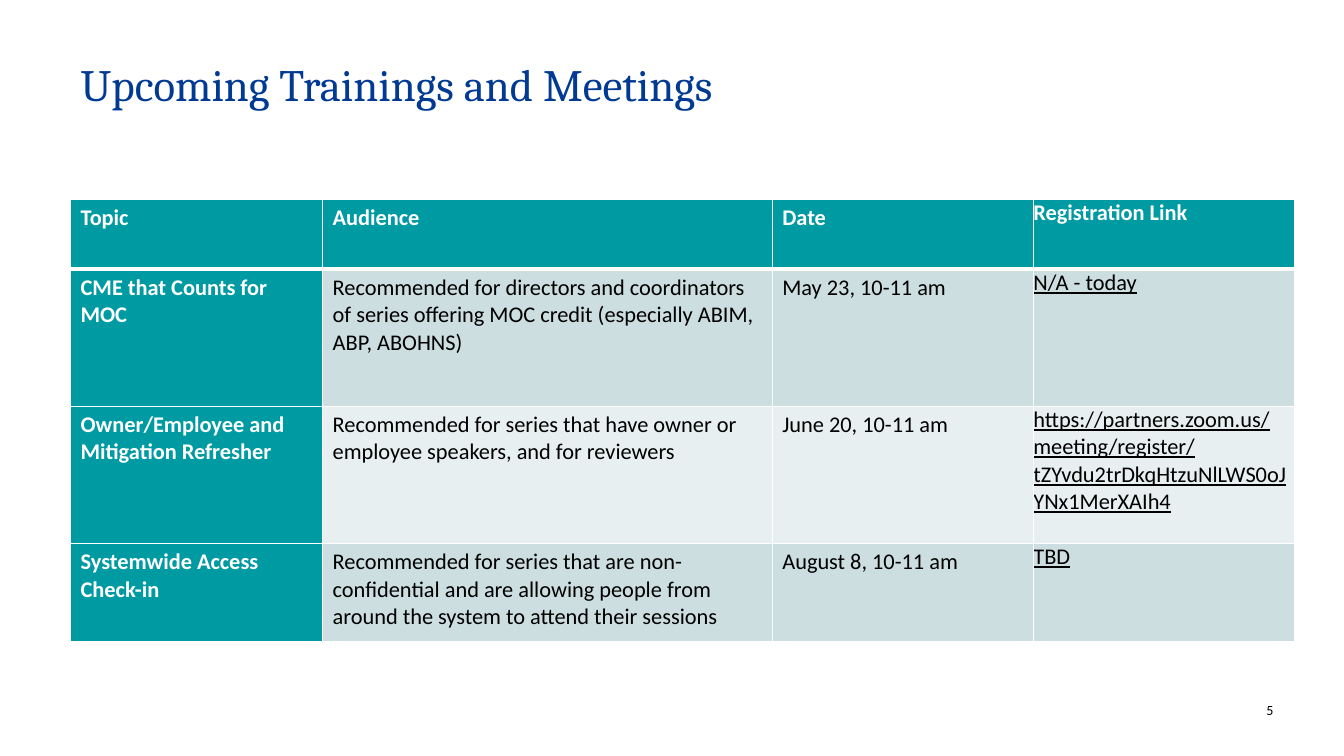
from lxml.etree import SubElement
from pptx import Presentation
from pptx.dml.color import RGBColor
from pptx.enum.text import MSO_ANCHOR, MSO_AUTO_SIZE, PP_ALIGN
from pptx.oxml.ns import qn
from pptx.util import Inches, Pt

TITLE = "Upcoming Trainings and Meetings"
PAGE_NUMBER = "5"
HEADINGS = ("Topic", "Audience", "Date", "Registration Link")
TRAININGS = [
    ("CME that Counts for MOC",
     "Recommended for directors and coordinators of series offering MOC credit "
     "(especially ABIM, ABP, ABOHNS)",
     "May 23, 10-11 am",
     "N/A - today"),
    ("Owner/Employee and Mitigation Refresher",
     "Recommended for series that have owner or employee speakers, and for reviewers",
     "June 20, 10-11 am",
     "https://partners.zoom.us/meeting/register/tZYvdu2trDkqHtzuNlLWS0oJYNx1MerXAIh4"),
    ("Systemwide Access Check-in",
     "Recommended for series that are non-confidential and are allowing people "
     "from around the system to attend their sessions",
     "August 8, 10-11 am",
     "TBD"),
]
COLORS = {"navy": "003A93", "teal": "009AA3", "odd": "CCDEE0", "even": "E7EFF0",
          "white": "FFFFFF", "black": "000000"}

SLIDE_WIDTH, SLIDE_HEIGHT = 13.33, 7.5
LEFT = 0.7
TABLE_TOP = 1.98
COLUMN_WIDTHS = (2.5, 4.46, 2.59, 2.59)
ROW_HEIGHTS = (0.69, 1.36, 1.36, 0.98)
LINK_COLUMN = len(HEADINGS) - 1


def write(frame, text, size=16, font="Calibri", color="black", bold=False,
          underline=False, align=PP_ALIGN.LEFT, spacing=None):
    frame.word_wrap = True
    paragraph = frame.paragraphs[0]
    paragraph.alignment = align
    if spacing:
        paragraph.line_spacing = spacing
    run = paragraph.add_run()
    run.text = text
    run.font.size = Pt(size)
    run.font.name = font
    run.font.bold = bold
    run.font.underline = underline
    run.font.color.rgb = RGBColor.from_string(COLORS[color])


def add_borders(cell, **widths):
    properties = cell._tc.get_or_add_tcPr()
    for side, width in widths.items():
        line = SubElement(properties, qn(f"a:ln{side}"), w=str(Pt(width)))
        fill = SubElement(line, qn("a:solidFill"))
        SubElement(fill, qn("a:srgbClr"), val=COLORS["white"])


def add_title(slide):
    title = slide.shapes.title
    title.left, title.top = Inches(LEFT), Inches(0.57)
    title.width, title.height = Inches(11.92), Inches(1.05)
    title.text_frame.vertical_anchor = MSO_ANCHOR.TOP
    title.text_frame.auto_size = MSO_AUTO_SIZE.NONE
    write(title.text_frame, TITLE, size=32, font="Cambria", color="navy", spacing=0.9)


def add_trainings(slide):
    rows = [HEADINGS, *TRAININGS]
    schedule = slide.shapes.add_table(
        len(rows), len(HEADINGS), Inches(LEFT), Inches(TABLE_TOP),
        Inches(sum(COLUMN_WIDTHS)), Inches(sum(ROW_HEIGHTS))).table
    for column, width in zip(schedule.columns, COLUMN_WIDTHS):
        column.width = Inches(width)
    for row, height in zip(schedule.rows, ROW_HEIGHTS):
        row.height = Inches(height)
    for r, row in enumerate(rows):
        for c, text in enumerate(row):
            cell = schedule.cell(r, c)
            heading = r == 0 or c == 0
            band = "teal" if heading else "odd" if r % 2 else "even"
            add_borders(cell, L=1, R=1, T=3 if r == 1 else 1, B=3 if r == 0 else 1)
            cell.fill.solid()
            cell.fill.fore_color.rgb = RGBColor.from_string(COLORS[band])
            if c == LINK_COLUMN:
                cell.margin_left = cell.margin_right = 0
                cell.margin_top = cell.margin_bottom = 0
            write(cell.text_frame, text, bold=heading,
                  color="white" if heading else "black",
                  underline=c == LINK_COLUMN and not heading)


def add_page_number(slide):
    number = slide.shapes.add_textbox(
        Inches(12.25), Inches(6.96), Inches(0.38), Inches(0.17)).text_frame
    number.margin_left = number.margin_right = 0
    number.margin_top = number.margin_bottom = 0
    write(number, PAGE_NUMBER, size=10, align=PP_ALIGN.RIGHT)


def main():
    deck = Presentation()
    deck.slide_width, deck.slide_height = Inches(SLIDE_WIDTH), Inches(SLIDE_HEIGHT)
    slide = deck.slides.add_slide(deck.slide_layouts[5])
    add_title(slide)
    add_trainings(slide)
    add_page_number(slide)
    deck.save("out.pptx")


if __name__ == "__main__":
    main()
